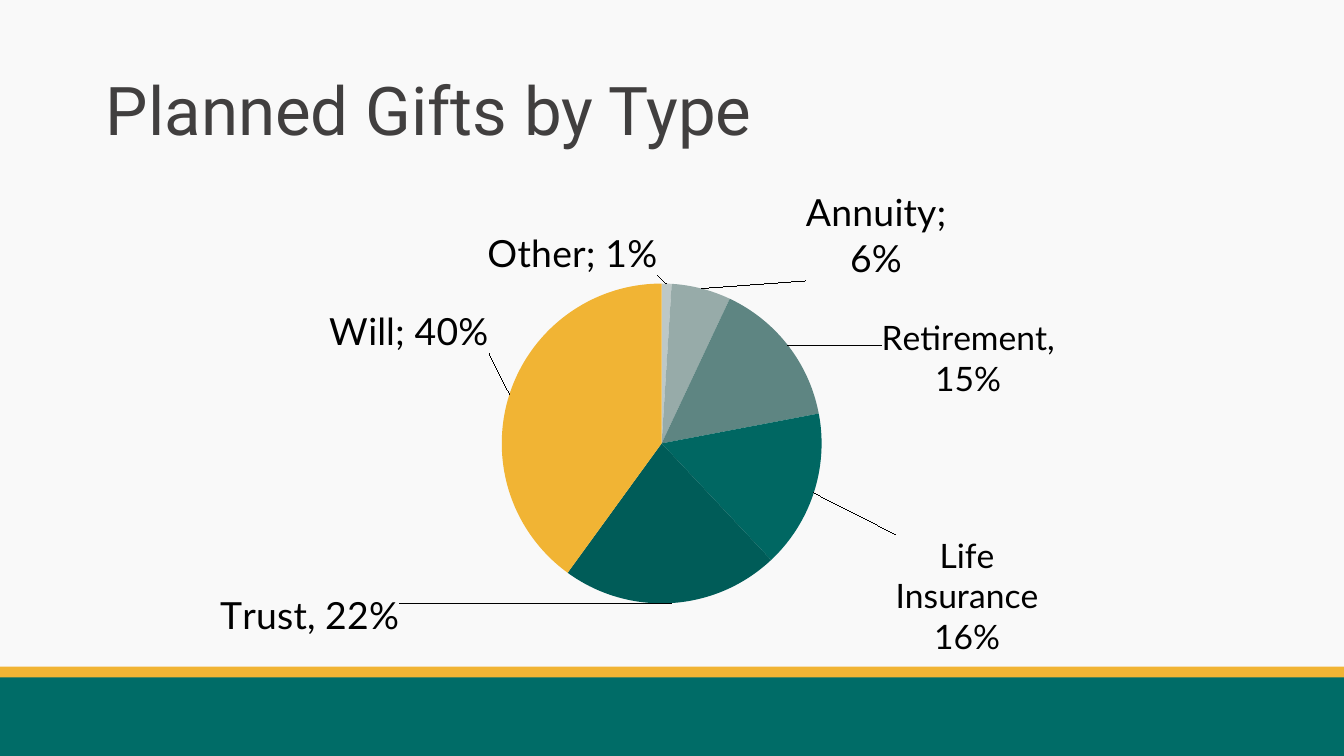
"""Build the slide with the pie chart of planned gifts by type."""
import lxml.etree
import pptx
import pptx.chart.data
import pptx.dml.color
import pptx.enum.chart
import pptx.enum.shapes
import pptx.enum.text
import pptx.oxml.ns
import pptx.util

Inches = pptx.util.Inches
Pt = pptx.util.Pt
qn = pptx.oxml.ns.qn

COLORS = {
    "background": "F9F9F9", "green": "006C67", "gold": "F1B434",
    "title": "413F3F", "label": "000000",
}
TITLE = "Planned Gifts by Type"
BANDS = [("green", 4.99, 0.66), ("gold", 4.96, 0.08)]
CHART_BOX = (1.17, 1.25, 7.47, 3.79)
PIE_BOX = (3.73, 2.11, 2.38, 2.38)
GIFTS = [
    ("Other", 0.01, "BDC8C7", None, (-0.7, 0)),
    ("Annuity", 0.06, "97ABA9", None, (0.76, 0)),
    ("Retirement", 0.15, "5E8582", ("Retirement, 15%", 18), (0.65, 0.43)),
    ("Life Insurance", 0.16, "006762", ("Life Insurance 16%", 18), (0.55, 0.29)),
    ("Trust", 0.22, "005C58", ("Trust, 22%", 20), (-2.7, -0.14)),
    ("Will", 0.4, "F1B434", None, (-0.1, -0.28)),
]


def rgb(value):
    return pptx.dml.color.RGBColor.from_string(value)


def style_font(font, name, size, color):
    font.name = name
    font.size = Pt(size)
    font.color.rgb = rgb(color)


def manual_layout(**settings):
    layout = lxml.etree.Element(qn("c:layout"))
    manual = lxml.etree.SubElement(layout, qn("c:manualLayout"))
    for key, value in settings.items():
        lxml.etree.SubElement(manual, qn(f"c:{key}")).set("val", str(value))
    return layout


def add_bands(slide):
    for color, top, height in BANDS:
        band = slide.shapes.add_shape(
            pptx.enum.shapes.MSO_SHAPE.RECTANGLE,
            Inches(-0.01), Inches(top), Inches(10.01), Inches(height))
        band.shadow.inherit = False
        band.fill.solid()
        band.fill.fore_color.rgb = rgb(COLORS[color])
        band.line.fill.background()


def add_title(slide):
    frame = slide.shapes.add_textbox(
        Inches(0.69), Inches(0.3), Inches(8.62), Inches(1.09)).text_frame
    frame.word_wrap = True
    frame.vertical_anchor = pptx.enum.text.MSO_ANCHOR.MIDDLE
    frame.text = TITLE
    frame.paragraphs[0].line_spacing = 0.9
    style_font(frame.paragraphs[0].runs[0].font, "Roboto", 36, COLORS["title"])


def label_gift(point, custom):
    label = point.data_label
    if custom:
        text, size = custom
        label.text_frame.text = text
        style_font(label.text_frame.paragraphs[0].runs[0].font,
                   "Lato", size, COLORS["label"])
    else:
        style_font(label.font, "Lato", 20, COLORS["label"])
    label.position = pptx.enum.chart.XL_LABEL_POSITION.OUTSIDE_END


def add_gift_chart(slide):
    left, top, width, height = CHART_BOX
    gift_data = pptx.chart.data.CategoryChartData(number_format="0%")
    gift_data.categories = [gift[0] for gift in GIFTS]
    gift_data.add_series("Series 1", [gift[1] for gift in GIFTS])
    chart = slide.shapes.add_chart(
        pptx.enum.chart.XL_CHART_TYPE.PIE,
        *map(Inches, CHART_BOX), gift_data).chart
    chart.has_legend = False
    chart.has_title = False
    style_font(chart.font, "Lato", 36, COLORS["label"])

    plot_area = chart.plots[0]._element.getparent()
    for layout in plot_area.findall(qn("c:layout")):
        plot_area.remove(layout)
    pie_left, pie_top, pie_width, pie_height = PIE_BOX
    plot_area.insert(0, manual_layout(
        layoutTarget="inner", xMode="edge", yMode="edge",
        x=round((pie_left - left) / width, 3),
        y=round((pie_top - top) / height, 3),
        w=round(pie_width / width, 3), h=round(pie_height / height, 3)))

    series = chart.plots[0].series[0]
    labels = series.data_labels
    labels.show_value = True
    labels.show_category_name = True
    labels.number_format = "0%"
    labels.number_format_is_linked = False
    style_font(labels.font, "Lato", 20, COLORS["label"])

    for index, (_, _, color, custom, _) in enumerate(GIFTS):
        point = series.points[index]
        point.format.fill.solid()
        point.format.fill.fore_color.rgb = rgb(color)
        point.format.line.fill.background()
        label_gift(point, custom)

    for label, gift in zip(series._element.iter(qn("c:dLbl")), GIFTS):
        shift_x, shift_y = gift[4]
        label.insert(1, manual_layout(
            x=round(shift_x / width, 3), y=round(shift_y / height, 3)))
        label.find(qn("c:showCatName")).set("val", "1")
        lxml.etree.SubElement(label, qn("c:separator")).text = "; "


def main():
    deck = pptx.Presentation()
    deck.slide_width = Inches(10)
    deck.slide_height = Inches(10 * 9 / 16)
    slide = deck.slides.add_slide(deck.slide_layouts[6])
    slide.background.fill.solid()
    slide.background.fill.fore_color.rgb = rgb(COLORS["background"])
    add_bands(slide)
    add_gift_chart(slide)
    add_title(slide)
    deck.save("out.pptx")


if __name__ == "__main__":
    main()
